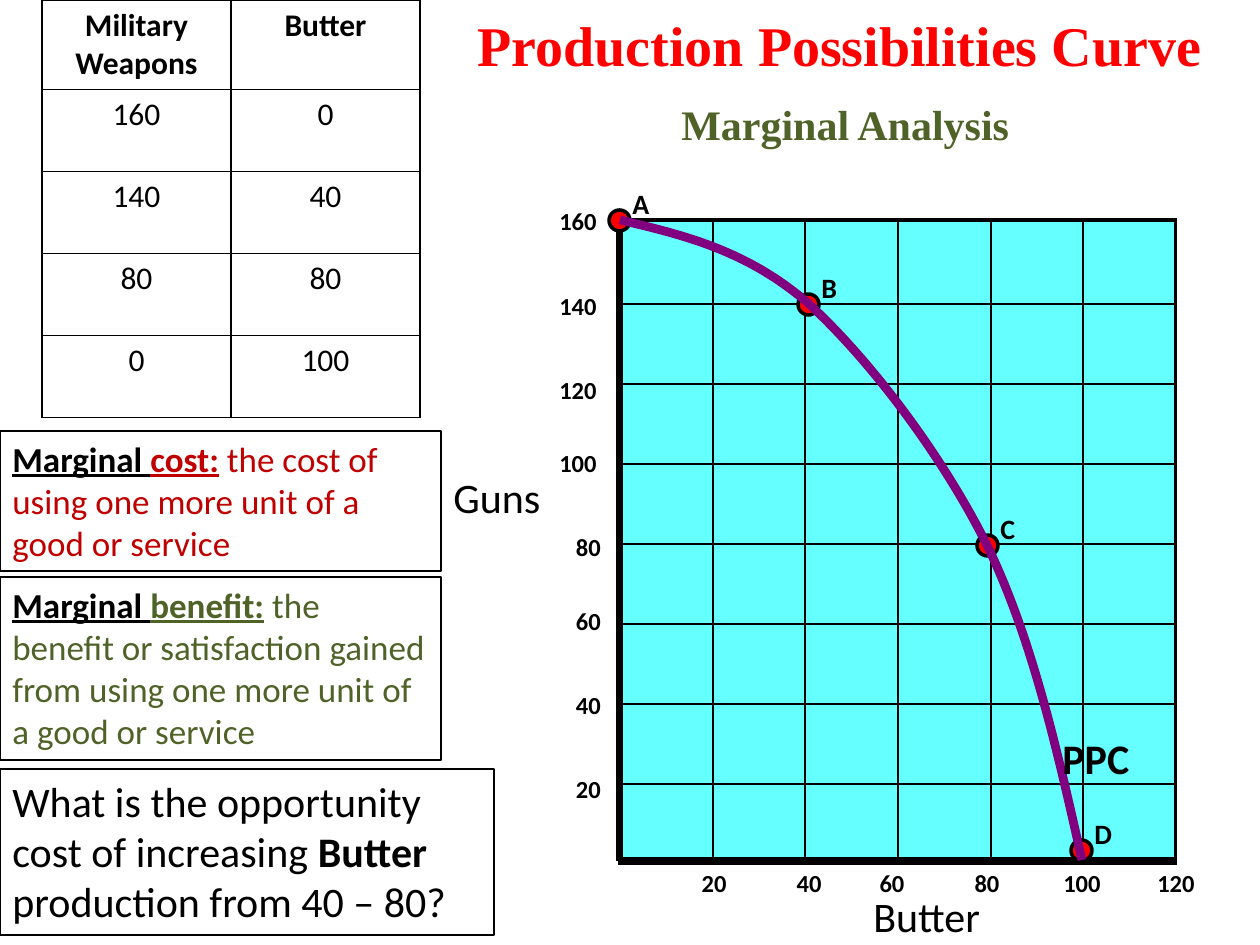
from lxml import etree
from pptx import Presentation
from pptx.dml.color import RGBColor
from pptx.enum.shapes import MSO_CONNECTOR, MSO_SHAPE
from pptx.enum.text import MSO_ANCHOR, MSO_AUTO_SIZE, PP_ALIGN
from pptx.oxml.ns import qn
from pptx.util import Pt

EMU_PER_INCH, PX_PER_INCH = 914400, 126
TITLE_ONLY = 5
CENTER, LEFT = PP_ALIGN.CENTER, PP_ALIGN.LEFT
TOP, NO_AUTOFIT = MSO_ANCHOR.TOP, MSO_AUTO_SIZE.NONE
RECTANGLE, OVAL = MSO_SHAPE.RECTANGLE, MSO_SHAPE.OVAL
STRAIGHT = MSO_CONNECTOR.STRAIGHT
SANS, SERIF = "Calibri", "Times New Roman"
COLORS = {"ink": "000000", "paper": "FFFFFF", "red": "FF0000", "cost": "C00000",
          "olive": "4F6228", "plot": "66FFFF", "curve": "800080"}


def px(length):
    """Turn px into EMU."""
    return round(length * EMU_PER_INCH / PX_PER_INCH)


def rgb(name):
    """Look up a palette colour."""
    return RGBColor.from_string(COLORS[name])


def add_run(paragraph, text, size, color="ink", bold=False, underline=False, font=SANS):
    """Add one formatted run to a paragraph."""
    run = paragraph.add_run()
    run.text = text
    run.font.name, run.font.size = font, Pt(size)
    run.font.bold, run.font.underline = bold, underline
    run.font.color.rgb = rgb(color)


def prepare_frame(frame):
    """Make a text frame wrap from its top and return its first paragraph."""
    frame.word_wrap, frame.auto_size = True, NO_AUTOFIT
    frame.vertical_anchor = TOP
    return frame.paragraphs[0]


def add_label(slide, box, text, size, bold=False, align=LEFT):
    """Add a single-run text box."""
    label = slide.shapes.add_textbox(*map(px, box))
    paragraph = prepare_frame(label.text_frame)
    paragraph.alignment = align
    add_run(paragraph, text, size, bold=bold)


def set_borders(cell, widths):
    """Draw the left, right, top and bottom borders of a cell in points."""
    properties = cell._tc.get_or_add_tcPr()
    for index, (side, width) in enumerate(zip("LRTB", widths)):
        border = etree.Element(qn(f"a:ln{side}"), w=str(Pt(width)))
        fill = etree.SubElement(border, qn("a:solidFill"))
        etree.SubElement(fill, qn("a:srgbClr"), val=COLORS["ink"])
        properties.insert(index, border)


def add_grid(slide, left, top, widths, heights, fill, edge=1):
    """Add a ruled table whose outer border may be heavier."""
    rows, columns = len(heights), len(widths)
    box = (left, top, sum(widths), sum(heights))
    table = slide.shapes.add_table(rows, columns, *map(px, box)).table
    table.first_row = table.horz_banding = False
    for column, width in zip(table.columns, widths):
        column.width = px(width)
    for r, height in enumerate(heights):
        table.rows[r].height = px(height)
        for c in range(columns):
            cell = table.cell(r, c)
            cell.fill.solid()
            cell.fill.fore_color.rgb = rgb(fill)
            outer = (c == 0, c == columns - 1, r == 0, r == rows - 1)
            set_borders(cell, [edge if side else 1 for side in outer])
    return table


def add_heading(slide, left, top, width, height):
    """Fill the title placeholder with the title and subtitle."""
    title = slide.shapes.title
    title.left, title.top, title.width, title.height = map(px, (left, top, width, height))
    heading = prepare_frame(title.text_frame)
    subtitle = title.text_frame.add_paragraph()
    heading.alignment = subtitle.alignment = CENTER
    subtitle.space_before = Pt(12)
    add_run(heading, "Production Possibilities Curve", 32, "red", True, font=SERIF)
    add_run(subtitle, " Marginal Analysis", 24, "olive", True, font=SERIF)


def add_axes(slide, left, top, width, height):
    """Draw the two heavy axes of the plot."""
    bottom = top + height
    for end_x, end_y in ((left, top), (left + width, bottom)):
        axis = slide.shapes.add_connector(STRAIGHT, *map(px, (left, bottom, end_x, end_y)))
        axis.line.color.rgb, axis.line.width = rgb("ink"), Pt(4)
        etree.SubElement(axis._element.spPr, qn("a:effectLst"))


def add_point(slide, left, top, letter):
    """Draw one lettered point of the curve."""
    marker = slide.shapes.add_shape(OVAL, *map(px, (left, top, 21, 21)))
    marker.shadow.inherit = False
    marker.fill.solid()
    marker.fill.fore_color.rgb = rgb("red")
    marker.line.color.rgb, marker.line.width = rgb("ink"), Pt(2)
    add_label(slide, (left + 11, top - 30, 53, 46), letter, 16, True)


def add_curve(slide, left, top):
    """Draw the frontier as three cubic segments."""
    controls = [(63, 15), (127, 30), (189, 84), (249, 139), (321, 233), (367, 325),
                (412, 418), (437, 529), (462, 640)]
    builder = slide.shapes.build_freeform(px(left), px(top))
    builder.add_line_segments([(px(left + x), px(top + y)) for x, y in controls], close=False)
    curve = builder.convert_to_shape()
    curve.shadow.inherit = False
    curve.fill.background()
    curve.line.color.rgb, curve.line.width = rgb("curve"), Pt(5)
    lines = list(curve._element.iter(qn("a:lnTo")))
    outline = lines[0].getparent()
    for start in range(0, len(lines), 3):
        segment = etree.SubElement(outline, qn("a:cubicBezTo"))
        for line in lines[start:start + 3]:
            segment.append(line[0])
            outline.remove(line)


def add_plot(slide, left, top, width, height):
    """Draw the curve plot with its grid, points and labels."""
    edges = [round(i * width / 6) for i in range(7)]
    widths = [end - start for start, end in zip(edges, edges[1:])]
    add_grid(slide, left, top, widths, [84] + [80] * 7, "plot", 2.25)
    add_axes(slide, left, top, width, height)
    for x, y, letter in ((-11, -10, "A"), (178, 74, "B"), (357, 315, "C"), (451, 620, "D")):
        add_point(slide, left + x, top + y, letter)
    add_curve(slide, left, top)
    add_label(slide, (left + 430, top + 506, 116, 63), "PPC", 24, True)
    guns_tops = (548, 464, 380, 306, 222, 149, 65, -20)
    for value, y in zip(range(20, 161, 20), guns_tops):
        label_width = 84 if value >= 100 else 63
        add_label(slide, (left - label_width, top + y, label_width, 42),
                  str(value), 14, True, CENTER)
    butter_centers = (94, 189, 272, 367, 462, 556)
    for value, x in zip(range(20, 121, 20), butter_centers):
        add_label(slide, (left + x - 42, top + 642, 84, 42), str(value), 14, True, CENTER)
    add_label(slide, (left - 179, top + 245, 116, 64), "Guns", 24)
    add_label(slide, (left + 241, top + 664, 179, 63), "Butter", 24)


def add_schedule(slide, left, top, width):
    """Add the table of production choices."""
    choices = [("Military Weapons", "Butter"), ("160", "0"), ("140", "40"),
               ("80", "80"), ("0", "100")]
    table = add_grid(slide, left, top, [width // 2] * 2, [88] + [82] * 4, "paper")
    for r, choice in enumerate(choices):
        for c, text in enumerate(choice):
            paragraph = table.cell(r, c).text_frame.paragraphs[0]
            paragraph.alignment = CENTER
            add_run(paragraph, text, 18, bold=r == 0)


def add_panel(slide, box, size, runs, filled=True):
    """Add an outlined panel of mixed runs."""
    panel = slide.shapes.add_shape(RECTANGLE, *map(px, box))
    panel.shadow.inherit = False
    if filled:
        panel.fill.solid()
        panel.fill.fore_color.rgb = rgb("paper")
    else:
        panel.fill.background()
    panel.line.color.rgb, panel.line.width = rgb("ink"), Pt(0.75)
    paragraph = prepare_frame(panel.text_frame)
    paragraph.alignment = LEFT
    for text, *style in runs:
        add_run(paragraph, text, size, *style)


def add_definition(slide, box, term, color, meaning):
    """Add a panel that defines a marginal term."""
    add_panel(slide, box, 20, [("Marginal ", "ink", True, True),
                               (term, color, True, True), (meaning, color)])


def main():
    """Build and save the slide."""
    deck = Presentation()
    deck.slide_width, deck.slide_height = px(1260), px(945)
    slide = deck.slides.add_slide(deck.slide_layouts[TITLE_ONLY])
    add_heading(slide, 420, 4, 840, 154)
    add_plot(slide, 620, 220, 556, 641)
    add_schedule(slide, 42, 0, 378)
    add_panel(slide, (0, 769, 494, 166), 24,
              [("What is the opportunity cost of increasing ",), ("Butter", "ink", True),
               (" production from 40 – 80?",)], filled=False)
    add_definition(slide, (0, 577, 441, 183), "benefit:", "olive",
                   " the benefit or satisfaction gained from using one more unit of a good or service")
    add_definition(slide, (0, 431, 441, 140), "cost:", "cost",
                   " the cost of using one more unit of a good or service")
    deck.save("out.pptx")


if __name__ == "__main__":
    main()
